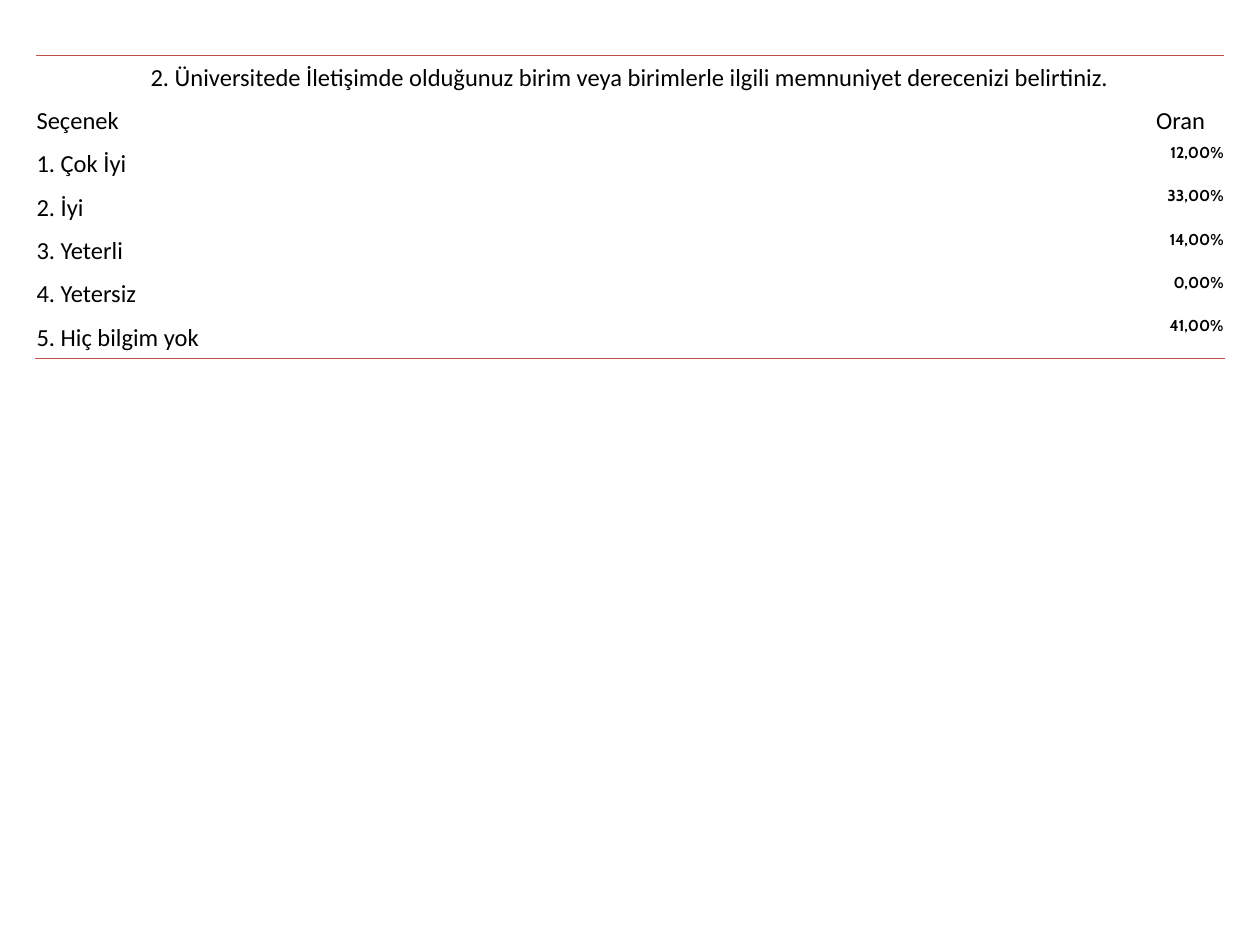
from lxml import etree
from pptx import Presentation
from pptx.dml.color import RGBColor
from pptx.enum.text import MSO_ANCHOR, PP_ALIGN
from pptx.oxml.ns import qn
from pptx.util import Inches, Pt

LEFT, MID, RIGHT = PP_ALIGN.LEFT, PP_ALIGN.CENTER, PP_ALIGN.RIGHT
TOP, CENTER = MSO_ANCHOR.TOP, MSO_ANCHOR.MIDDLE
COLS = [8.04, 0.7, 0.7]
ROW = 0.344
TITLE = ("2. Üniversitede İletişimde olduğunuz birim veya birimlerle "
         "ilgili memnuniyet derecenizi belirtiniz.")
RATES = [
    ("Çok İyi", "12,00%"),
    ("İyi", "33,00%"),
    ("Yeterli", "14,00%"),
    ("Yetersiz", "0,00%"),
    ("Hiç bilgim yok", "41,00%"),
]


def write(cell, text, align=LEFT, anchor=CENTER, font="Calibri", size=14, bold=False):
    cell.vertical_anchor = anchor
    par = cell.text_frame.paragraphs[0]
    par.alignment = align
    run = par.add_run()
    run.text = text
    run.font.name, run.font.size, run.font.bold = font, Pt(size), bold
    run.font.color.rgb = RGBColor.from_string("000000")


def rule(cell, side, color):
    """Draw a one-point border on one side (lnT or lnB) of a cell."""
    line = etree.Element(qn("a:" + side), w=str(Pt(1)))
    fill = etree.SubElement(line, qn("a:solidFill"))
    etree.SubElement(fill, qn("a:srgbClr"), val=color)
    cell._tc.get_or_add_tcPr().insert(0, line)


deck = Presentation()
deck.slide_width, deck.slide_height = Inches(10), Inches(7.5)
slide = deck.slides.add_slide(deck.slide_layouts[6])

count = len(RATES) + 2
table = slide.shapes.add_table(
    count, len(COLS), Inches(0.28), Inches(0.44),
    Inches(sum(COLS)), Inches(ROW * count)).table
table.first_row = table.horz_banding = False
for col, width in zip(table.columns, COLS):
    col.width = Inches(width)
for row in table.rows:
    row.height = Inches(ROW)
    for cell in row.cells:
        cell.fill.background()
        cell.margin_left = cell.margin_right = cell.margin_top = Inches(0.01)
        cell.margin_bottom = 0

for col in range(len(COLS)):
    rule(table.cell(0, col), "lnT", "C0504D")
    rule(table.cell(count - 1, col), "lnB", "C0504D")

table.cell(0, 0).merge(table.cell(0, 2))
write(table.cell(0, 0), TITLE, MID)
write(table.cell(1, 0), "Seçenek")
write(table.cell(1, 2), "Oran", MID)
for num, (name, rate) in enumerate(RATES, 1):
    write(table.cell(num + 1, 0), f"{num}. {name}")
    write(table.cell(num + 1, 2), rate, RIGHT, TOP, "Cabin", 9, True)

deck.save("out.pptx")
